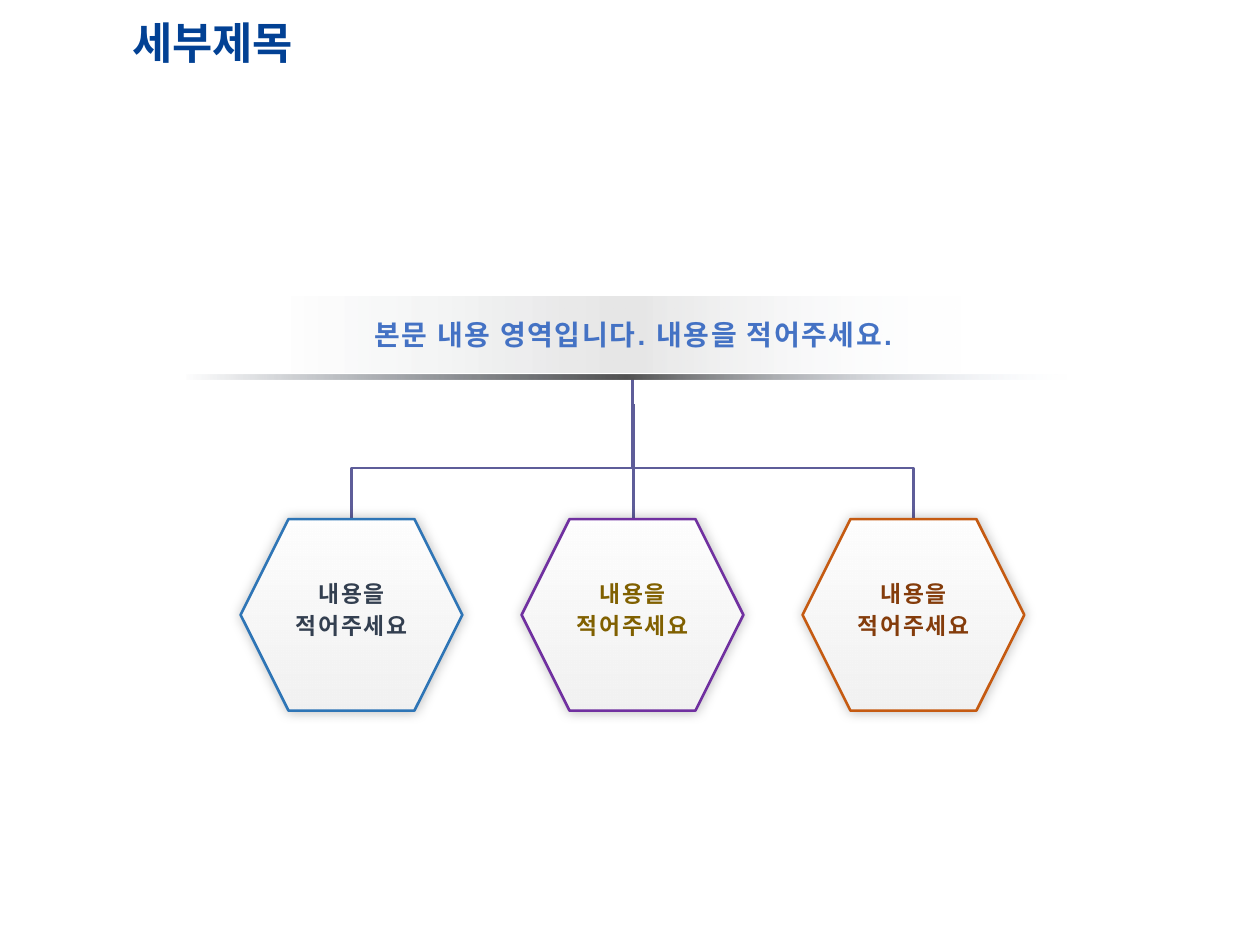
import pptx
import pptx.dml.color
import pptx.enum.shapes
import pptx.enum.text
import pptx.oxml
import pptx.oxml.ns
import pptx.util
from pptx.util import Inches

SHAPES = pptx.enum.shapes.MSO_SHAPE
LINES = pptx.enum.shapes.MSO_CONNECTOR
ALIGN = pptx.enum.text.PP_ALIGN
ANCHOR = pptx.enum.text.MSO_ANCHOR
NAMESPACE = pptx.oxml.ns.nsdecls("a")
LINE_COLOR = "5E5D99"
CENTER = 5.02
PITCH = 2.23
ITEMS = [("2E75B6", "333F50"), ("7030A0", "806000"), ("C55A11", "843C0B")]


def rgb(value):
    """Return the colour for a hex string."""
    return pptx.dml.color.RGBColor.from_string(value)


def color_xml(value, opacity):
    """Return the XML of a colour with its opacity in percent."""
    return f'<a:srgbClr val="{value}"><a:alpha val="{opacity * 1000}"/></a:srgbClr>'


def set_gradient(shape, stops, angle):
    """Fill a shape with a linear gradient of (position, colour, opacity) stops."""
    shape.fill.background()
    stops_xml = "".join(
        f'<a:gs pos="{position * 1000}">{color_xml(value, opacity)}</a:gs>'
        for position, value, opacity in stops
    )
    gradient = pptx.oxml.parse_xml(
        f'<a:gradFill {NAMESPACE} rotWithShape="1"><a:gsLst>{stops_xml}</a:gsLst>'
        f'<a:lin ang="{angle * 60000}" scaled="0"/></a:gradFill>'
    )
    properties = shape._element.spPr
    properties.replace(properties.find(pptx.oxml.ns.qn("a:noFill")), gradient)


def set_glow_shadow(shape):
    """Give a shape a soft shadow on all sides."""
    shape.shadow.inherit = False
    effects = shape._element.spPr.find(pptx.oxml.ns.qn("a:effectLst"))
    effects.append(pptx.oxml.parse_xml(
        f'<a:outerShdw {NAMESPACE} blurRad="{pptx.util.Pt(7)}" dist="0" dir="0" '
        f'algn="ctr" rotWithShape="0">{color_xml("000000", 25)}</a:outerShdw>'
    ))


def add_text(page, left, top, width, height, lines, size, color, spacing=None):
    """Add a centred bold text box with one paragraph for each line."""
    box = page.shapes.add_textbox(Inches(left), Inches(top), Inches(width), Inches(height))
    frame = box.text_frame
    frame.word_wrap = True
    frame.auto_size = pptx.enum.text.MSO_AUTO_SIZE.SHAPE_TO_FIT_TEXT
    frame.text = "\n".join(lines)
    for para in frame.paragraphs:
        para.alignment = ALIGN.CENTER
        if spacing:
            para.line_spacing = pptx.util.Pt(spacing)
        for span in para.runs:
            span.font.name = "Arial"
            span.font.size = pptx.util.Pt(size)
            span.font.bold = True
            span.font.color.rgb = rgb(color)
            span._r.get_or_add_rPr().set("spc", "100")


def add_line(page, kind, start_x, start_y, end_x, end_y):
    """Add a connector without a shadow."""
    line = page.shapes.add_connector(
        kind, Inches(start_x), Inches(start_y), Inches(end_x), Inches(end_y))
    line.line.color.rgb = rgb(LINE_COLOR)
    line.line.width = pptx.util.Pt(1.5)
    line._element.spPr.append(pptx.oxml.parse_xml(f"<a:effectLst {NAMESPACE}/>"))
    return line


def add_branch(page, start_x, start_y, end_x, end_y, bend):
    """Add an elbow that leaves its start upwards and bends at a share of the way."""
    middle_x, middle_y = (start_x + end_x) / 2, (start_y + end_y) / 2
    half_width, half_height = (start_y - end_y) / 2, abs(start_x - end_x) / 2
    side = 1 if start_x < end_x else -1
    line = add_line(page, LINES.ELBOW,
                    middle_x + side * half_width, middle_y + half_height,
                    middle_x - side * half_width, middle_y - half_height)
    properties = line._element.spPr
    turn = 90 if side == 1 else 270
    properties.find(pptx.oxml.ns.qn("a:xfrm")).set("rot", str(turn * 60000))
    geometry = properties.find(pptx.oxml.ns.qn("a:prstGeom"))
    geometry.find(pptx.oxml.ns.qn("a:avLst")).append(pptx.oxml.parse_xml(
        f'<a:gd {NAMESPACE} name="adj1" fmla="val {round(bend * 100000)}"/>'))


def add_band(page, left, top, width, height, middle_color, middle_opacity):
    """Add a bar that fades out towards both ends."""
    band = page.shapes.add_shape(
        SHAPES.RECTANGLE, Inches(left), Inches(top), Inches(width), Inches(height))
    set_gradient(band, [(0, "333F50", 0), (50, middle_color, middle_opacity),
                        (100, "E1EBFB", 0)], 0)
    band.line.fill.background()
    band.shadow.inherit = False


def add_title(page, left, top, width, height):
    """Place and format the slide title."""
    title = page.shapes.title
    title.left, title.top = Inches(left), Inches(top)
    title.width, title.height = Inches(width), Inches(height)
    frame = title.text_frame
    frame.text = "세부제목"
    frame.vertical_anchor = ANCHOR.MIDDLE
    para = frame.paragraphs[0]
    para.alignment = ALIGN.LEFT
    para.line_spacing = 0.9
    font = para.runs[0].font
    font.name, font.size, font.bold = "Calibri", pptx.util.Pt(25), True
    font.color.rgb = rgb("024194")


def add_tree(page, top, bottom):
    """Draw the trunk and the two side branches."""
    for side in (1, -1):
        add_branch(page, CENTER + side * PITCH, bottom, CENTER, top, 0.7)
    add_line(page, LINES.STRAIGHT, CENTER + 0.01, top + 0.21, CENTER + 0.01, bottom - 0.78)


def add_hexagon(page, left, top, width, height, line_color, text_color):
    """Add one outlined hexagon with its two-line label."""
    hexagon = page.shapes.add_shape(
        SHAPES.HEXAGON, Inches(left), Inches(top), Inches(width), Inches(height))
    set_gradient(hexagon, [(0, "FFFFFF", 100), (100, "F2F2F2", 100),
                           (100, "E1EBFB", 0)], 90)
    hexagon.line.color.rgb = rgb(line_color)
    hexagon.line.width = pptx.util.Pt(1.5)
    set_glow_shadow(hexagon)
    add_text(page, left + 0.02, top + 0.4, width - 0.04, 0.61,
             ["내용을", "적어주세요"], 13, text_color, 18)


def add_banner(page, left, top, width, height):
    """Add the rule and the sentence over the banner band."""
    add_band(page, left, top + height, width, 0.04, "525252", 100)
    add_text(page, left + 0.32, top + 0.12, width - 0.53, 0.37,
             ["본문 내용 영역입니다. 내용을 적어주세요."], 16, "4472C4")


def main():
    """Build and save the slide."""
    deck = pptx.Presentation()
    deck.slide_width, deck.slide_height = Inches(10), Inches(7.5)
    page = deck.slides.add_slide(deck.slide_layouts[5])
    add_title(page, 0.95, -0.07, 8.62, 0.86)
    add_tree(page, 3, 5.38)
    add_band(page, 2.26, 2.35, 5.42, 0.61, "000000", 10)
    width = 1.76
    for index, (line_color, text_color) in enumerate(ITEMS):
        left = CENTER + (index - 1) * PITCH - width / 2
        add_hexagon(page, left, 4.12, width, 1.52, line_color, text_color)
    add_banner(page, 1.47, 2.35, 7, 0.62)
    deck.save("out.pptx")


if __name__ == "__main__":
    main()
